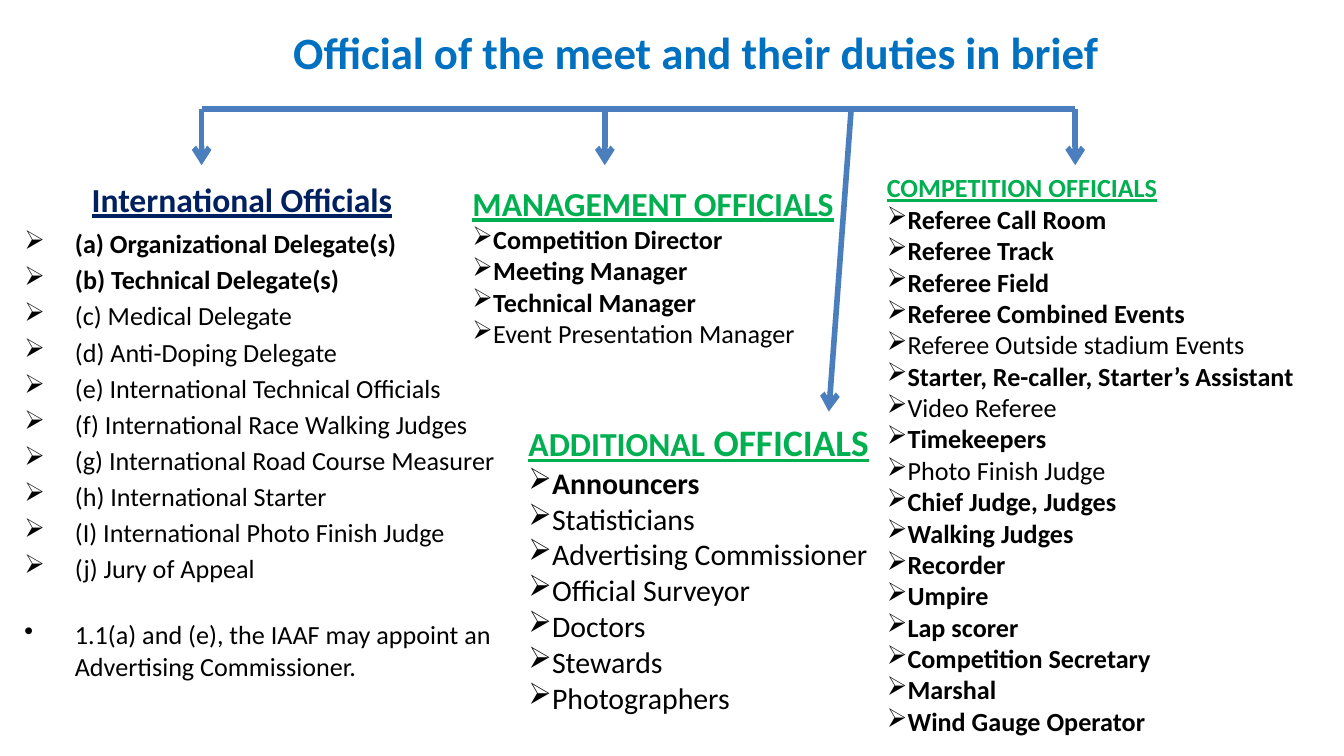
from lxml.etree import SubElement as Sub
from pptx import Presentation as Deck
from pptx.dml.color import RGBColor as Rgb
from pptx.enum.shapes import MSO_CONNECTOR as Kind
from pptx.enum.text import MSO_ANCHOR as Anchor, MSO_AUTO_SIZE as Fit
from pptx.oxml.ns import qn
from pptx.util import Pt

PX = 9525  # EMU per px, 96 px to the inch
FONT = "Calibri"
BLUE, NAVY, GREEN, BLACK, LINE = "0070C0", "002060", "00B050", "000000", "4B7EBC"

# A leading * marks a bold item
WORLD = [
    "*(a) Organizational Delegate(s)", "*(b) Technical Delegate(s)",
    "(c) Medical Delegate", "(d) Anti-Doping Delegate",
    "(e) International Technical Officials",
    "(f) International Race Walking Judges",
    "(g) International Road Course Measurer", "(h) International Starter",
    "(I) International Photo Finish Judge", "(j) Jury of Appeal",
]
NOTE = "1.1(a) and (e), the IAAF may appoint an Advertising Commissioner."
MANAGE = [
    "*Competition Director", "*Meeting Manager", "*Technical Manager",
    "Event Presentation Manager",
]
COMPETE = [
    "*Referee Call Room", "*Referee Track", "*Referee Field",
    "*Referee Combined Events", "Referee Outside stadium Events",
    "*Starter, Re-caller, Starter’s Assistant", "Video Referee",
    "*Timekeepers", "Photo Finish Judge", "*Chief Judge, Judges",
    "*Walking Judges", "*Recorder", "*Umpire", "*Lap scorer",
    "*Competition Secretary", "*Marshal", "*Wind Gauge Operator",
]
EXTRA = [
    "*Announcers", "Statisticians", "Advertising Commissioner",
    "Official Surveyor", "Doctors", "Stewards", "Photographers",
]


def color(code):
    return Rgb.from_string(code)


def add_box(slide, *place, fit=Fit.SHAPE_TO_FIT_TEXT):
    frame = slide.shapes.add_textbox(*(n * PX for n in place)).text_frame
    frame.word_wrap = True
    frame.auto_size = fit
    return frame


def next_line(frame):
    """Give the empty first paragraph, or a new one after it."""
    first = frame.paragraphs[0]
    return frame.add_paragraph() if first.runs else first


def add_run(line, text, size, tint=BLACK, **style):
    run = line.add_run()
    run.text = text
    look = {"name": FONT, "size": Pt(size), "bold": False, **style}
    for key, value in look.items():
        setattr(run.font, key, value)
    run.font.color.rgb = color(tint)


def add_head(frame, tint, *parts, under=True):
    line = next_line(frame)
    for text, size in parts:
        add_run(line, text, size, tint, bold=True, underline=under)


def add_item(frame, item, size, mark="➢", indent=0, gap=0):
    line = next_line(frame)
    props = line._p.get_or_add_pPr()
    props.set("marL", str(indent * PX))
    props.set("indent", str(-indent * PX))
    Sub(props, qn("a:buChar")).set("char", mark)
    if gap:
        line.space_before = Pt(gap)
    add_run(line, item.lstrip("*"), size, bold=item.startswith("*"))


def add_group(slide, place, heads, items, size):
    """Green heading with its bulleted list."""
    frame = add_box(slide, *place)
    add_head(frame, GREEN, *heads)
    for item in items:
        add_item(frame, item, size)


def add_line(slide, *ends, arrow=True):
    link = slide.shapes.add_connector(Kind.STRAIGHT, *(n * PX for n in ends))
    link.line.color.rgb = color(LINE)
    link.line.width = Pt(3)
    if arrow:
        Sub(link.line._ln, qn("a:tailEnd")).set("type", "arrow")
    Sub(link._element.spPr, qn("a:effectLst"))


def main():
    deck = Deck()
    deck.slide_width, deck.slide_height = 960 * PX, 540 * PX
    slide = deck.slides.add_slide(deck.slide_layouts[6])

    # International officials
    head = add_box(slide, 56, 126, 248, 32, fit=Fit.NONE)
    head.vertical_anchor = Anchor.MIDDLE
    add_head(head, NAVY, ("International Officials", 18))
    body = add_box(slide, 8, 158, 368, 368, fit=Fit.NONE)
    for i, item in enumerate(WORLD):
        add_item(body, item, 14, indent=36, gap=2.5 if i else 0)
    add_item(body, NOTE, 14, mark="•", indent=36, gap=18.8)

    # Slide title
    title = add_box(slide, 200, 13, 688, 48)
    add_head(title, BLUE, ("Official of the meet and their duties in brief", 24),
             under=False)

    # Other groups of officials
    add_group(slide, (328, 126, 304, 130),
              [("MANAGEMENT OFFICIALS", 18)], MANAGE, 14)
    add_group(slide, (624, 118, 336, 417),
              [("COMPETITION OFFICIALS", 14)], COMPETE, 14)
    add_group(slide, (368, 295, 272, 223),
              [("ADDITIONAL", 18), (" OFFICIALS", 20)], EXTRA, 16)

    # Bar and the arrows that hang from it
    top = 78
    add_line(slide, 144, top, 768, top, arrow=False)
    for x, end, foot in [(144, 144, 118), (608, 592, 294),
                         (432, 432, 118), (768, 768, 118)]:
        add_line(slide, x, top, end, foot)

    deck.save("out.pptx")


if __name__ == "__main__":
    main()
